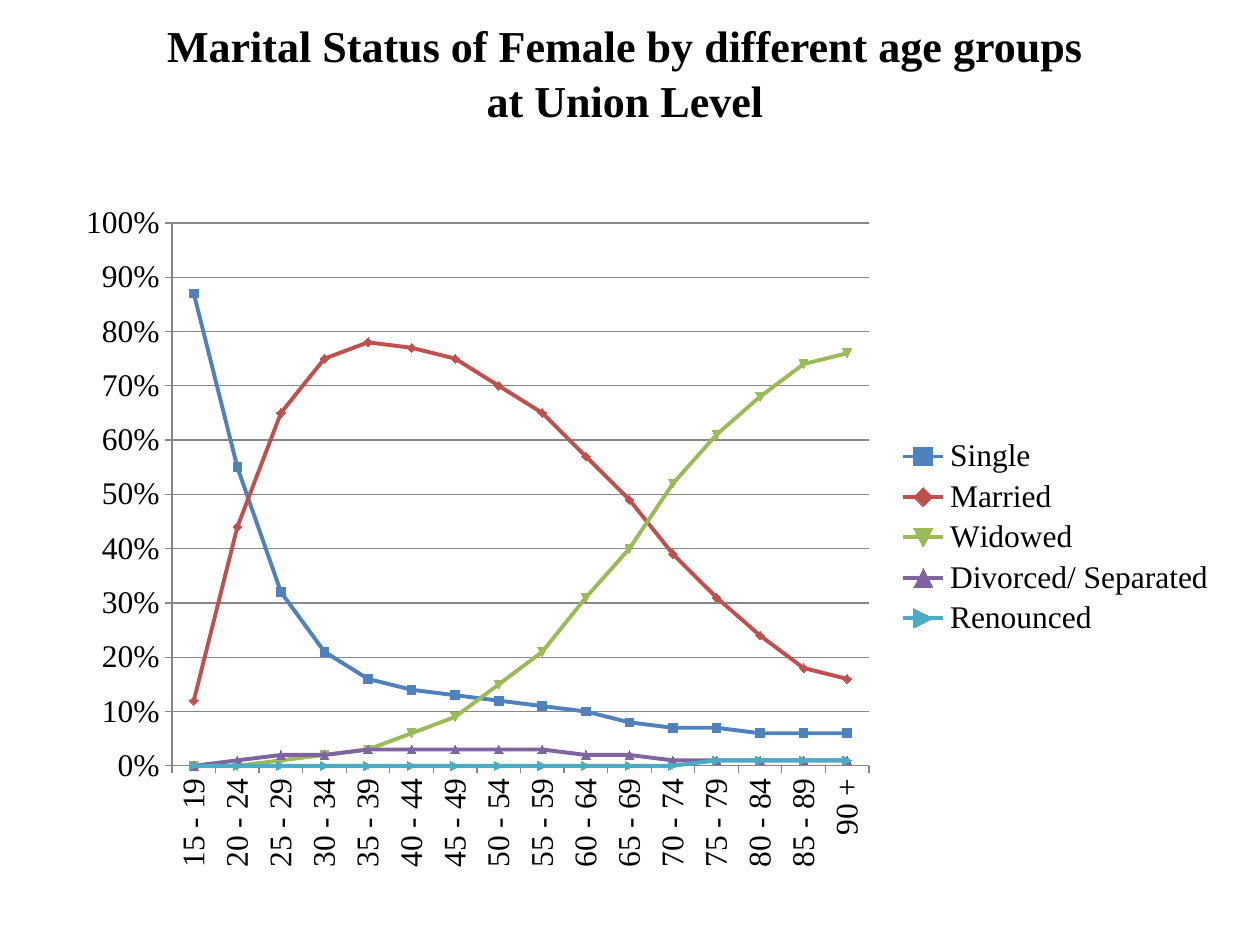
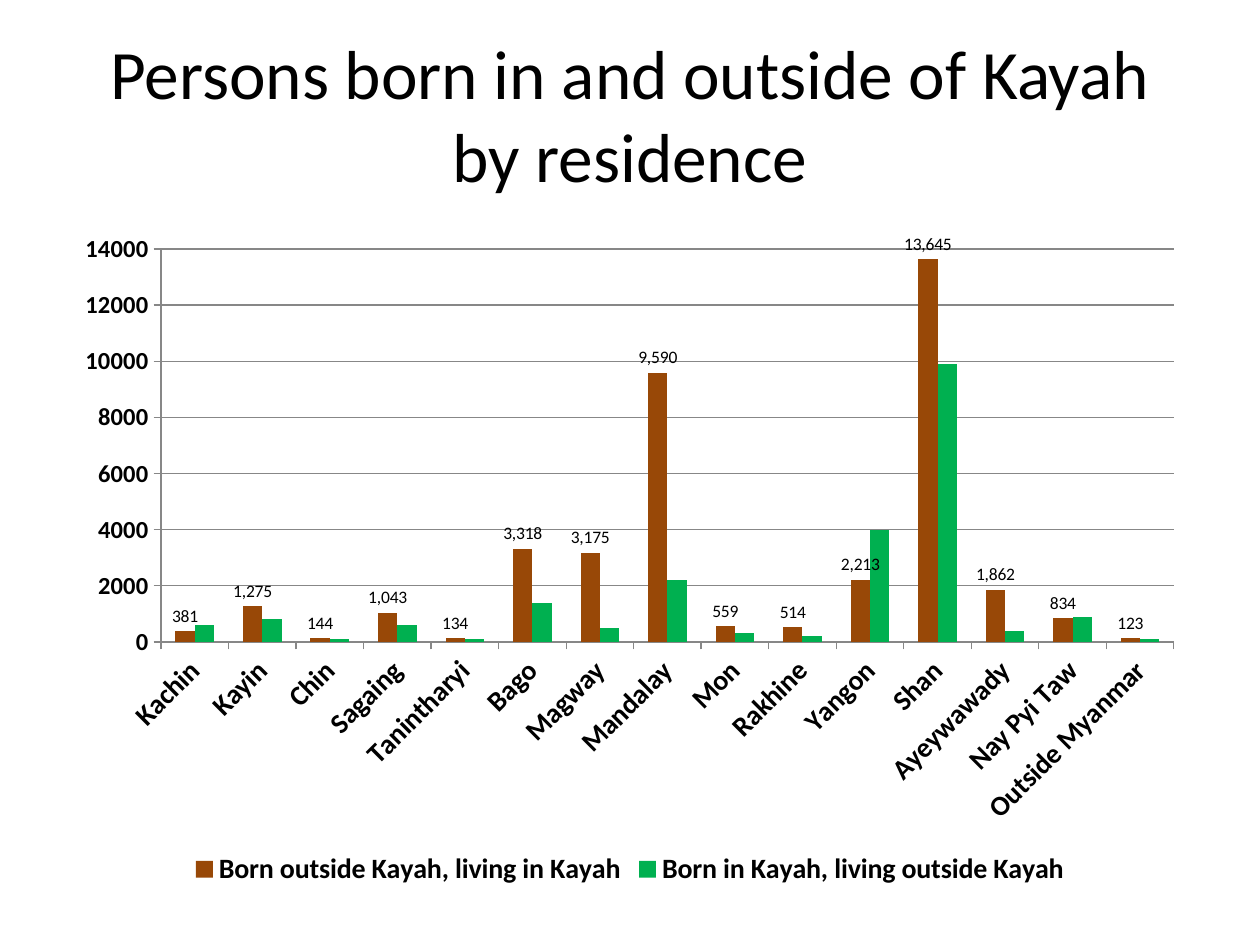
from lxml import etree
from pptx import Presentation
from pptx.chart.data import CategoryChartData
from pptx.dml.color import RGBColor
from pptx.enum.chart import XL_CHART_TYPE, XL_LABEL_POSITION, XL_LEGEND_POSITION, XL_TICK_MARK
from pptx.enum.text import MSO_ANCHOR, MSO_AUTO_SIZE, PP_ALIGN
from pptx.oxml.ns import qn
from pptx.util import Pt

PX = 914400 / 126
WIDTH, HEIGHT = 1260, 945
BLACK = RGBColor(0, 0, 0)
GREY = RGBColor(0x87, 0x87, 0x87)
BLUE = RGBColor(0x4F, 0x81, 0xBD)
RED = RGBColor(0xC0, 0x50, 0x4D)
LIME = RGBColor(0x9B, 0xBB, 0x59)
PURPLE = RGBColor(0x80, 0x64, 0xA2)
TEAL = RGBColor(0x4B, 0xAC, 0xC6)
BROWN = RGBColor(0x98, 0x48, 0x07)
GREEN = RGBColor(0x00, 0xB0, 0x50)

AGES = [f"{low} - {low + 4}" for low in range(15, 90, 5)] + ["90 +"]
STATUS = [
    ("Single", BLUE, [0.87, 0.55, 0.32, 0.21, 0.16, 0.14, 0.13, 0.12,
                      0.11, 0.1, 0.08, 0.07, 0.07, 0.06, 0.06, 0.06]),
    ("Married", RED, [0.12, 0.44, 0.65, 0.75, 0.78, 0.77, 0.75, 0.7,
                      0.65, 0.57, 0.49, 0.39, 0.31, 0.24, 0.18, 0.16]),
    ("Widowed", LIME, [0, 0, 0.01, 0.02, 0.03, 0.06, 0.09, 0.15,
                       0.21, 0.31, 0.4, 0.52, 0.61, 0.68, 0.74, 0.76]),
    ("Divorced/ Separated", PURPLE, [0, 0.01, 0.02, 0.02, 0.03, 0.03, 0.03, 0.03,
                                     0.03, 0.02, 0.02, 0.01, 0.01, 0.01, 0.01, 0.01]),
    ("Renounced", TEAL, [0] * 12 + [0.01] * 4),
]
STATES = ["Kachin", "Kayin", "Chin", "Sagaing", "Tanintharyi", "Bago", "Magway",
          "Mandalay", "Mon", "Rakhine", "Yangon", "Shan", "Ayeywawady",
          "Nay Pyi Taw", "Outside Myanmar"]
BIRTHS = [
    ("Born outside Kayah, living in Kayah", BROWN,
     [381, 1275, 144, 1043, 134, 3318, 3175, 9590, 559, 514, 2213, 13645, 1862, 834, 123]),
    ("Born in Kayah, living outside Kayah", GREEN,
     [600, 800, 100, 600, 100, 1400, 500, 2200, 300, 200, 4000, 9900, 400, 900, 100]),
]
SLIDES = [
    {"title": "Marital Status of Female by different age groups\vat Union Level",
     "head": (0, 38, 1250, 120), "foot": 60, "space": 1.05,
     "font": {"name": "Times New Roman", "size": Pt(25.2), "bold": True},
     "kind": XL_CHART_TYPE.LINE_MARKERS, "names": AGES, "rows": STATUS,
     "box": (63, 193, 1166, 689), "plot": (172, 223, 697, 543),
     "sizes": (18, 18, 18), "bold": False, "turn": -90, "side": XL_LEGEND_POSITION.RIGHT,
     "scale": {"minimum_scale": 0, "maximum_scale": 1, "major_unit": 0.1}, "form": "0%"},
    {"title": "Persons born in and outside of Kayah by residence",
     "head": (63, 38, 1134, 151), "foot": 6, "space": 1,
     "font": {"name": "Calibri", "size": Pt(39.6), "bold": False},
     "kind": XL_CHART_TYPE.COLUMN_CLUSTERED, "names": STATES, "rows": BIRTHS,
     "box": (63, 220, 1134, 672), "plot": (161, 249, 1013, 393),
     "sizes": (16, 14, 16), "bold": True, "turn": -45, "side": XL_LEGEND_POSITION.BOTTOM,
     "scale": {"minimum_scale": 0, "maximum_scale": 14000, "major_unit": 2000}, "form": "0"},
]


def emu(*spans):
    return [round(span * PX) for span in spans]


def put(item, **values):
    for key, value in values.items():
        setattr(item, key, value)


def ink(font, name, size, bold):
    put(font, name=name, size=size, bold=bold)
    font.color.rgb = BLACK


def rule(line):
    line.color.rgb = GREY
    line.width = Pt(0.75)


def add_title(slide, page):
    title = slide.shapes.title
    left, top, width, height = emu(*page["head"])
    put(title, left=left, top=top, width=width, height=height)
    frame = title.text_frame
    frame.text = page["title"]
    put(frame, word_wrap=True, auto_size=MSO_AUTO_SIZE.NONE,
        vertical_anchor=MSO_ANCHOR.MIDDLE, margin_bottom=emu(page["foot"])[0])
    para = frame.paragraphs[0]
    put(para, alignment=PP_ALIGN.CENTER, line_spacing=page["space"])
    for run in para.runs:
        ink(run.font, **page["font"])


def set_plot(chart, box, plot):
    area = chart.element.find(".//" + qn("c:plotArea"))
    for old in area.findall(qn("c:layout")):
        area.remove(old)
    layout = etree.Element(qn("c:layout"))
    area.insert(0, layout)
    manual = etree.SubElement(layout, qn("c:manualLayout"))
    left, top, width, height = box
    x, y, w, h = plot
    parts = {"layoutTarget": "inner", "xMode": "edge", "yMode": "edge",
             "x": (x - left) / width, "y": (y - top) / height,
             "w": w / width, "h": h / height}
    for tag, value in parts.items():
        text = value if isinstance(value, str) else f"{value:.4f}"
        etree.SubElement(manual, qn("c:" + tag), val=text)


def set_axes(chart, page):
    face = page["font"]["name"]
    for axis, size in zip((chart.category_axis, chart.value_axis), page["sizes"]):
        put(axis, major_tick_mark=XL_TICK_MARK.OUTSIDE, minor_tick_mark=XL_TICK_MARK.NONE)
        ink(axis.tick_labels.font, face, Pt(size), page["bold"])
        rule(axis.format.line)
    chart.category_axis.has_major_gridlines = False
    put(chart.value_axis, has_major_gridlines=True, **page["scale"])
    rule(chart.value_axis.major_gridlines.format.line)
    put(chart.value_axis.tick_labels, number_format=page["form"], number_format_is_linked=False)
    body = chart.element.find(f".//{qn('c:catAx')}/{qn('c:txPr')}/{qn('a:bodyPr')}")
    body.set("rot", str(page["turn"] * 60000))
    body.set("vert", "horz")


def paint(chart, page):
    plot = chart.plots[0]
    plot.vary_by_categories = False
    lined = page["kind"] == XL_CHART_TYPE.LINE_MARKERS
    for series, (_, color, _) in zip(plot.series, page["rows"]):
        fills = [series.marker.format.fill] if lined else [series.format.fill]
        if lined:
            put(series, smooth=False)
            put(series.marker, size=5)
            for line in (series.format.line, series.marker.format.line):
                line.color.rgb = color
            series.format.line.width = Pt(2.25)
        for fill in fills:
            fill.solid()
            fill.fore_color.rgb = color
    if not lined:
        put(plot, gap_width=150, overlap=0)
        labels = plot.series[0].data_labels
        put(labels, show_value=True, number_format="#,##0", number_format_is_linked=False,
            position=XL_LABEL_POSITION.OUTSIDE_END)
        ink(labels.font, page["font"]["name"], Pt(10), False)


def add_graph(slide, page):
    data = CategoryChartData()
    data.categories = page["names"]
    for name, _, values in page["rows"]:
        data.add_series(name, values)
    chart = slide.shapes.add_chart(page["kind"], *emu(*page["box"]), data).chart
    put(chart, has_title=False, has_legend=True)
    put(chart.legend, position=page["side"], include_in_layout=False)
    ink(chart.legend.font, page["font"]["name"], Pt(page["sizes"][2]), page["bold"])
    set_axes(chart, page)
    paint(chart, page)
    set_plot(chart, page["box"], page["plot"])


def main():
    deck = Presentation()
    deck.slide_width, deck.slide_height = emu(WIDTH, HEIGHT)
    for page in SLIDES:
        slide = deck.slides.add_slide(deck.slide_layouts[5])
        add_title(slide, page)
        add_graph(slide, page)
    deck.save("out.pptx")


if __name__ == "__main__":
    main()
